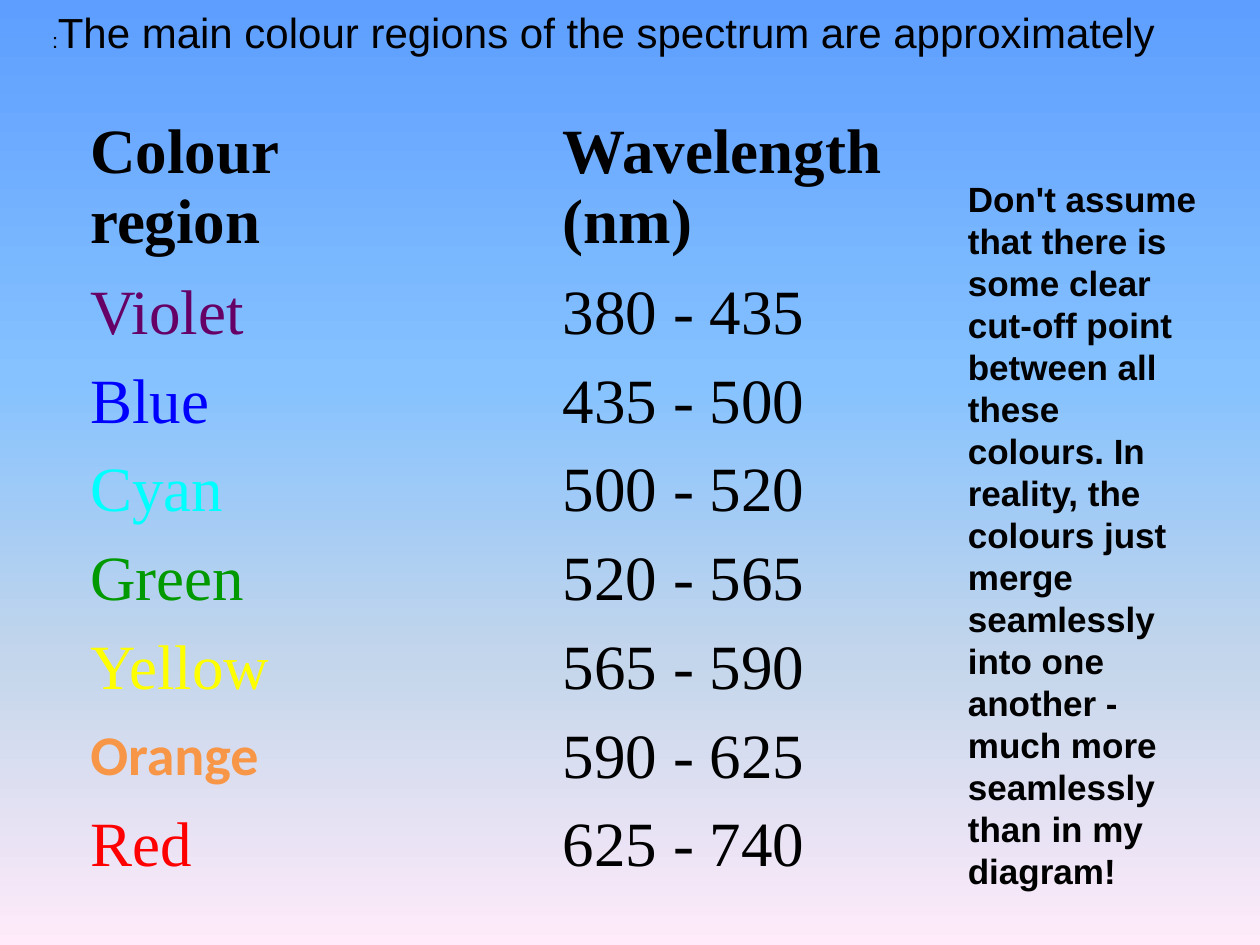
from copy import deepcopy

from pptx import Presentation
from pptx import util as u
from pptx.dml import color
from pptx.enum import text

BLACK = "000000"
NO_STYLE_NO_GRID = "{2D5ABB26-0587-4C30-8999-92F81FD0307C}"
SKY = [(0, "5E9EFF"), (0.4, "85C2FF"), (0.7, "C4D6EB"), (1, "FFEBFA")]
REGIONS = [
    ("Violet", "660066", "380 - 435"),
    ("Blue", "0000FF", "435 - 500"),
    ("Cyan", "00FFFF", "500 - 520"),
    ("Green", "009900", "520 - 565"),
    ("Yellow", "FFFF00", "565 - 590"),
    ("Orange", "F79646", "590 - 625"),
    ("Red", "FF0000", "625 - 740"),
]
NOTE = (
    "Don't assume that there is some clear cut-off point between all these "
    "colours. In reality, the colours just merge seamlessly into one another - "
    "much more seamlessly than in my diagram!"
)


def rgb(value):
    return color.RGBColor.from_string(value)


class SlideBuilder:
    body_font = "Arial"
    table_font = "Times New Roman"
    table_size = 36
    cell_margin = u.Pt(3.6)

    def __init__(self, slide):
        self.slide = slide

    def format_run(self, run, font, size, colour=BLACK, bold=False):
        run.font.name = font
        run.font.size = u.Pt(size)
        run.font.bold = bold
        run.font.color.rgb = rgb(colour)

    def background(self, stops):
        fill = self.slide.background.fill
        fill.gradient()
        fill.gradient_angle = 270
        stop_list = self.slide.element.xpath(".//a:gsLst")[0]
        while len(stop_list) < len(stops):
            stop_list.append(deepcopy(stop_list[0]))
        for stop, (position, colour) in zip(fill.gradient_stops, stops):
            stop.position = position
            stop.color.rgb = rgb(colour)

    def text_box(self, left, top, width, height, pieces, bold=False):
        shape = self.slide.shapes.add_textbox(
            u.Pt(left), u.Pt(top), u.Pt(width), u.Pt(height)
        )
        frame = shape.text_frame
        frame.word_wrap = True
        frame.auto_size = text.MSO_AUTO_SIZE.SHAPE_TO_FIT_TEXT
        frame.vertical_anchor = text.MSO_ANCHOR.MIDDLE
        paragraph = frame.paragraphs[0]
        for wording, size in pieces:
            run = paragraph.add_run()
            run.text = wording
            self.format_run(run, self.body_font, size, bold=bold)
        return paragraph

    def right_to_left_title(self, left, top, width, height, pieces):
        paragraph = self.text_box(left, top, width, height, pieces)
        paragraph.alignment = text.PP_ALIGN.CENTER
        paragraph._p.get_or_add_pPr().set("rtl", "1")

    def cell(self, cell, wording, colour=BLACK, bold=False, font=None, size=None):
        cell.fill.background()
        cell.vertical_anchor = text.MSO_ANCHOR.MIDDLE
        cell.margin_left = cell.margin_right = self.cell_margin
        cell.margin_top = cell.margin_bottom = self.cell_margin
        cell.text_frame.text = wording
        for paragraph in cell.text_frame.paragraphs:
            for run in paragraph.runs:
                self.format_run(
                    run, font or self.table_font, size or self.table_size, colour, bold
                )

    def spectrum_table(self, left, top, width, header_height, row_height, regions):
        height = header_height + row_height * len(regions)
        table = self.slide.shapes.add_table(
            len(regions) + 1, 2, u.Pt(left), u.Pt(top), u.Pt(width), u.Pt(height)
        ).table
        table.first_row = table.horz_banding = False
        table._tbl.tblPr.find(
            "{http://schemas.openxmlformats.org/drawingml/2006/main}tableStyleId"
        ).text = NO_STYLE_NO_GRID
        for row in table.rows:
            row.height = u.Pt(row_height)
        table.rows[0].height = u.Pt(header_height)
        self.cell(table.cell(0, 0), "Colour\nregion", bold=True)
        self.cell(table.cell(0, 1), "Wavelength (nm)", bold=True)
        for index, (name, colour, wavelength) in enumerate(regions, start=1):
            special = {}
            if name == "Orange":
                special = {"font": "Calibri", "size": 32, "bold": True}
            self.cell(table.cell(index, 0), name, colour, **special)
            self.cell(table.cell(index, 1), wavelength)


def main():
    presentation = Presentation()
    presentation.slide_width = u.Pt(720)
    presentation.slide_height = u.Pt(540)
    builder = SlideBuilder(
        presentation.slides.add_slide(presentation.slide_layouts[6])
    )
    builder.background(SKY)
    builder.right_to_left_title(
        -30, 0, 750, 36,
        [("The main colour regions of the spectrum are approximately", 24), (":", 12)],
    )
    builder.spectrum_table(48, 60, 540, 93.7, 50.7, REGIONS)
    builder.text_box(546, 108, 150, 395, [(NOTE, 20)], bold=True)
    presentation.save("out.pptx")


if __name__ == "__main__":
    main()
